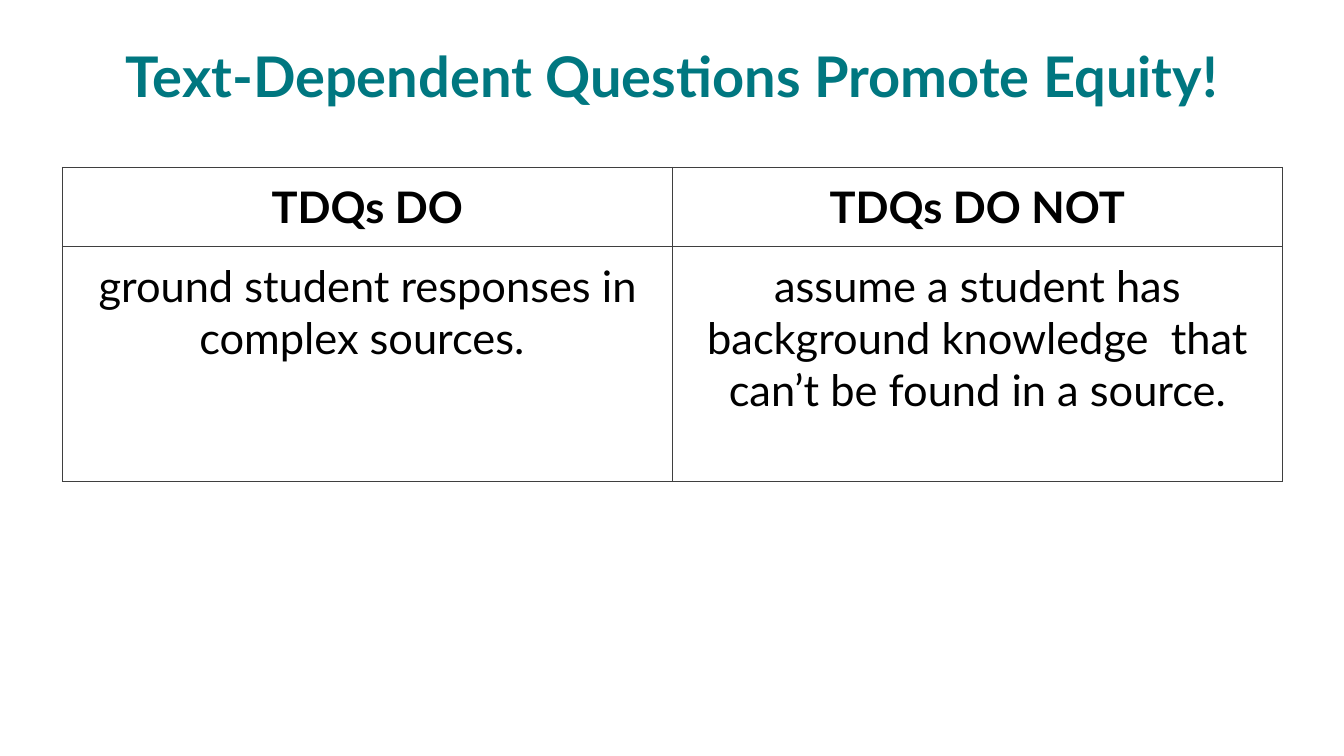
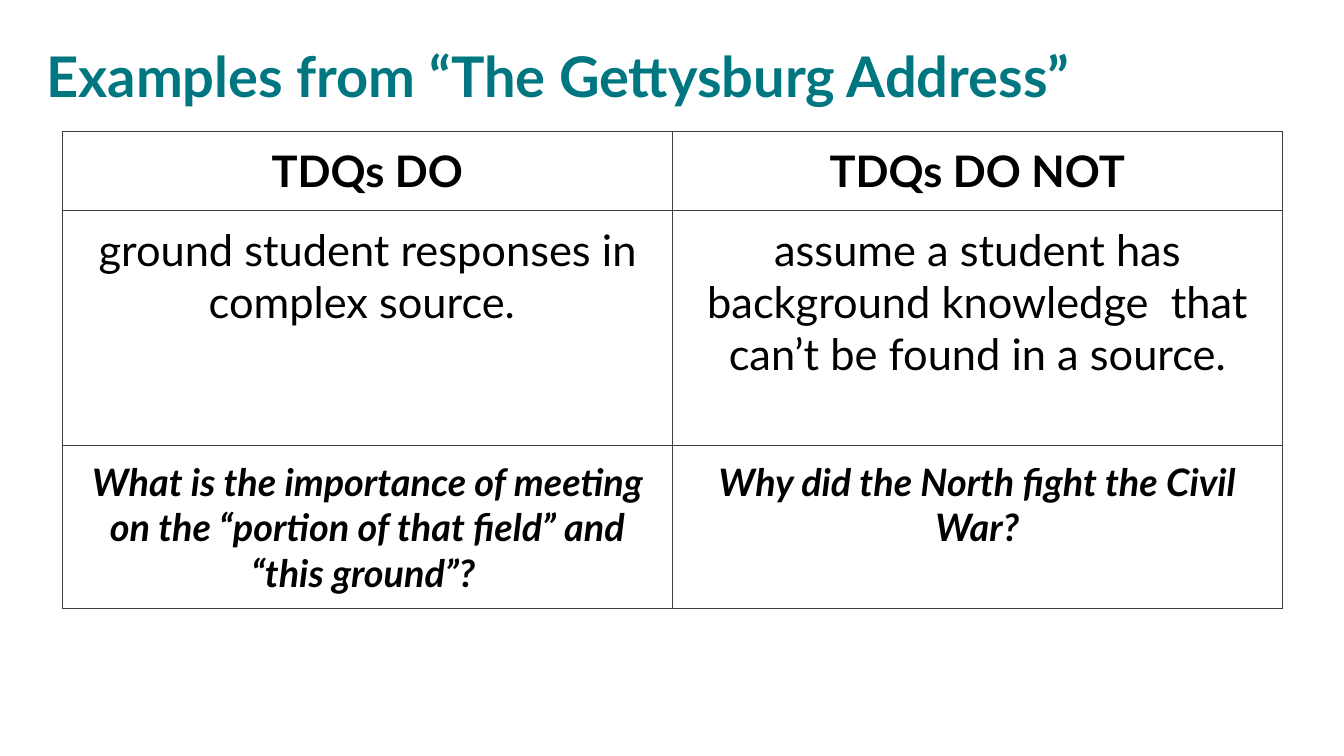
import pptx
import pptx.dml.color
import pptx.enum.text
import pptx.oxml
import pptx.oxml.ns
import pptx.util

Pt = pptx.util.Pt
RGBColor = pptx.dml.color.RGBColor
PP_ALIGN = pptx.enum.text.PP_ALIGN
MSO_ANCHOR = pptx.enum.text.MSO_ANCHOR

TEAL = RGBColor(0x00, 0x77, 0x80)
BLACK = RGBColor(0x00, 0x00, 0x00)
BORDER = RGBColor(0x3F, 0x3F, 0x3F)
FONT = "Lato"

SLIDE_W, SLIDE_H = 960, 540
TITLE_BOX = (26, 26, 908, 75)
TABLE_LEFT, TABLE_W = 44.6, 871.2
CELL_INSET = 9.4

HEADINGS = ("TDQs DO", "TDQs DO NOT")
NOT_ASSUMED = "assume a student has background knowledge  that can’t be found in a source."

HEADING_STYLE = dict(size=31, bold=True)
CLAIM_STYLE = dict(size=31)
EXAMPLE_STYLE = dict(size=27, bold=True, italic=True)
ROW_STYLES = ((56.4, HEADING_STYLE), (168, CLAIM_STYLE), (116.4, EXAMPLE_STYLE))


def add_run(p, text, size, color=BLACK, bold=False, italic=False):
    r = p.add_run()
    r.text = text
    r.font.name = FONT
    r.font.size = Pt(size)
    r.font.bold = bold
    r.font.italic = italic
    r.font.color.rgb = color


def add_title(slide, box, text, align):
    sp = slide.shapes.add_textbox(*map(Pt, box))
    tf = sp.text_frame
    tf.word_wrap = True
    tf.vertical_anchor = MSO_ANCHOR.TOP
    p = tf.paragraphs[0]
    p.alignment = align
    add_run(p, text, 40, TEAL, bold=True)


def add_borders(cell):
    tc_pr = cell._tc.get_or_add_tcPr()
    for side in "LRTB":
        tc_pr.append(pptx.oxml.parse_xml(
            f'<a:ln{side} {pptx.oxml.ns.nsdecls("a")} w="{Pt(0.75)}">'
            f'<a:solidFill><a:srgbClr val="{BORDER}"/></a:solidFill></a:ln{side}>'))


def fill_cell(cell, text, style):
    add_borders(cell)
    cell.fill.background()
    cell.margin_left = cell.margin_right = Pt(CELL_INSET)
    cell.margin_top = cell.margin_bottom = Pt(CELL_INSET)
    cell.vertical_anchor = MSO_ANCHOR.TOP
    p = cell.text_frame.paragraphs[0]
    p.alignment = PP_ALIGN.CENTER
    add_run(p, text, **style)


def add_comparison(slide, left, top, width, rows):
    styles = ROW_STYLES[:len(rows)]
    height = sum(h for h, _ in styles)
    table = slide.shapes.add_table(
        len(rows), len(HEADINGS), Pt(left), Pt(top), Pt(width), Pt(height)).table
    table.first_row = False
    table.horz_banding = False
    for col in table.columns:
        col.width = Pt(width / len(HEADINGS))
    for row, texts, (row_h, style) in zip(table.rows, rows, styles):
        row.height = Pt(row_h)
        for cell, text in zip(row.cells, texts):
            fill_cell(cell, text, style)


def add_comparison_slide(prs, title, align, table_top, rows):
    slide = prs.slides.add_slide(prs.slide_layouts[6])
    add_title(slide, TITLE_BOX, title, align)
    add_comparison(slide, TABLE_LEFT, table_top, TABLE_W, (HEADINGS, *rows))


def main():
    prs = pptx.Presentation()
    prs.slide_width, prs.slide_height = Pt(SLIDE_W), Pt(SLIDE_H)
    add_comparison_slide(
        prs, "Text-Dependent Questions Promote Equity!", PP_ALIGN.CENTER, 119.5,
        [("ground student responses in complex sources. ", NOT_ASSUMED)])
    add_comparison_slide(
        prs, "Examples from “The Gettysburg Address”", PP_ALIGN.LEFT, 94.1,
        [("ground student responses in complex source. ", NOT_ASSUMED),
         ("What is the importance of meeting on the “portion of that field” and “this ground”? ",
          "Why did the North fight the Civil War?")])
    prs.save("out.pptx")


if __name__ == "__main__":
    main()
